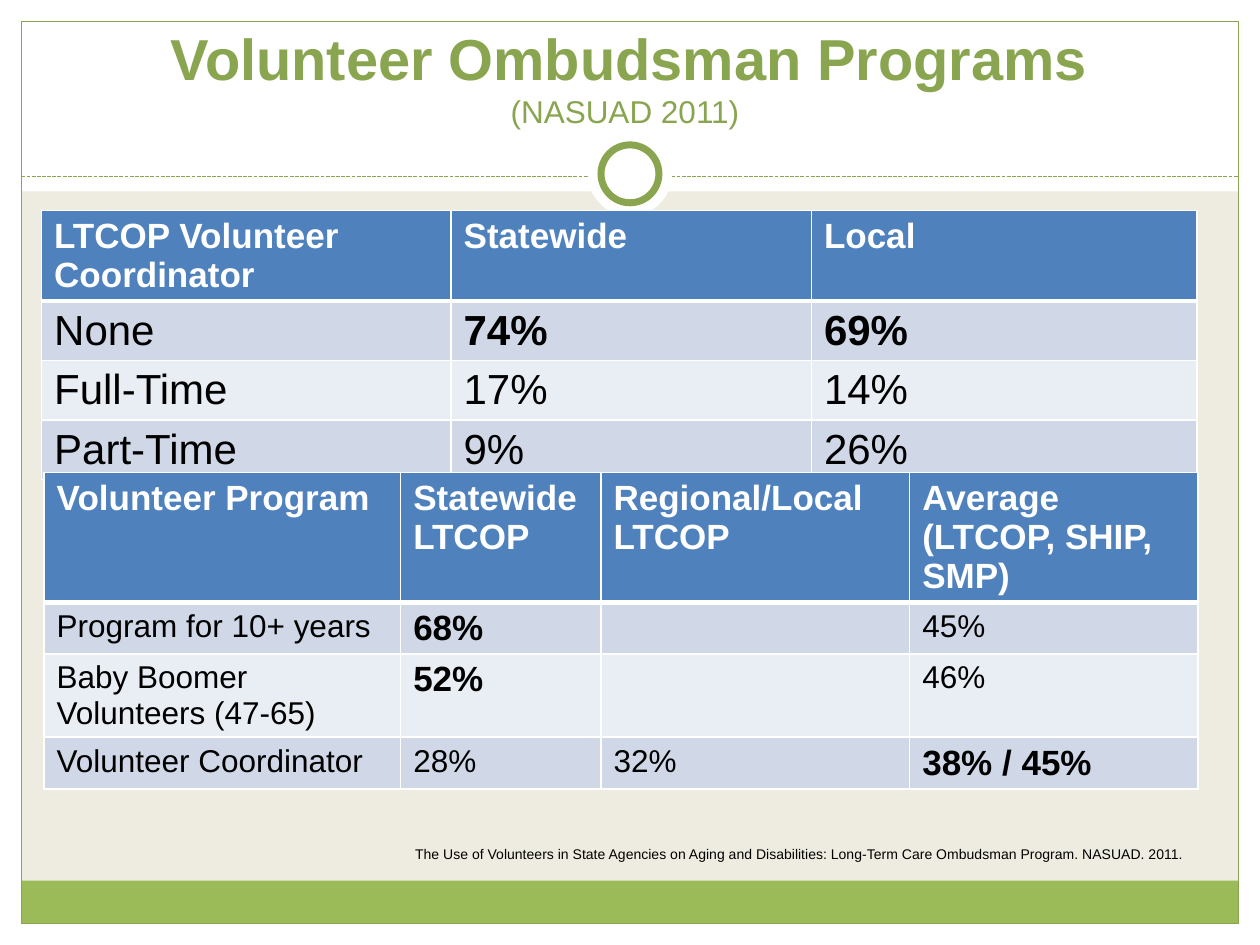
from lxml.etree import SubElement
from pptx import Presentation
from pptx.dml.color import RGBColor
from pptx.enum.dml import MSO_LINE
from pptx.enum.shapes import MSO_CONNECTOR, MSO_SHAPE
from pptx.enum.text import MSO_ANCHOR, MSO_AUTO_SIZE, PP_ALIGN
from pptx.oxml.ns import qn
from pptx.util import Inches, Pt

WIDTH, HEIGHT = 10, 7.5
MARGIN = 0.17
FONT = "Arial"
WHITE = RGBColor(0xFF, 0xFF, 0xFF)
BLACK = RGBColor(0, 0, 0)
BEIGE = RGBColor(0xEE, 0xEC, 0xE1)
GREEN = RGBColor(0x9B, 0xBB, 0x59)
DARK_GREEN = RGBColor(0x89, 0xA5, 0x4F)
BLUE = RGBColor(0x4F, 0x81, 0xBD)
BANDS = (RGBColor(0xD0, 0xD8, 0xE8), RGBColor(0xE9, 0xED, 0xF4))

COORDINATORS = [
    ["LTCOP Volunteer Coordinator", "Statewide", "Local"],
    ["None", "74%", "69%"],
    ["Full-Time", "17%", "14%"],
    ["Part-Time", "9%", "26%"],
]
PROGRAMS = [
    ["Volunteer Program", "Statewide LTCOP", "Regional/Local LTCOP",
     "Average\n(LTCOP, SHIP, SMP)"],
    ["Program for 10+ years", "68%", "", "45%"],
    ["Baby Boomer Volunteers (47-65)", "52%", "", "46%"],
    ["Volunteer Coordinator", "28%", "32%", "38% / 45%"],
]
HIGHLIGHTS = {"74%", "69%", "68%", "52%", "38% / 45%"}


def style_font(font, size, color, bold=False):
    font.name, font.size, font.bold = FONT, Pt(size), bold
    font.color.rgb = color


def add_shape(s, kind, x, y, w, h, fill=None, line_width=None):
    sp = s.shapes.add_shape(kind, Inches(x), Inches(y), Inches(w), Inches(h))
    sp.shadow.inherit = False
    if fill is None:
        sp.fill.background()
    else:
        sp.fill.solid()
        sp.fill.fore_color.rgb = fill
    if line_width is None:
        sp.line.fill.background()
    else:
        sp.line.color.rgb = DARK_GREEN
        sp.line.width = Pt(line_width)


def add_divider(s, y):
    line = s.shapes.add_connector(MSO_CONNECTOR.STRAIGHT, Inches(MARGIN), Inches(y),
                                  Inches(WIDTH - MARGIN), Inches(y))
    line.line.color.rgb = DARK_GREEN
    line.line.width = Pt(0.75)
    line.line.dash_style = MSO_LINE.SQUARE_DOT
    SubElement(line._element.spPr, qn("a:effectLst"))


def add_circle(s, center_y, size, line_width=None):
    add_shape(s, MSO_SHAPE.OVAL, (WIDTH - size) / 2, center_y - size / 2, size, size,
              WHITE, line_width)


def add_frame(s):
    """Draw the white margins, the green footer band and the ringed divider."""
    inner = WIDTH - 2 * MARGIN
    for x, y, w, h in ((0, HEIGHT - MARGIN, WIDTH, MARGIN),
                       (0, 0, WIDTH, 1.52),
                       (0, 0, MARGIN, HEIGHT),
                       (WIDTH - MARGIN, 0, MARGIN, HEIGHT)):
        add_shape(s, MSO_SHAPE.RECTANGLE, x, y, w, h, WHITE)
    add_shape(s, MSO_SHAPE.RECTANGLE, MARGIN, 6.99, inner, 0.34, GREEN)
    add_shape(s, MSO_SHAPE.RECTANGLE, MARGIN, MARGIN, inner, HEIGHT - 2 * MARGIN,
              line_width=0.75)
    add_divider(s, 1.4)
    add_circle(s, 1.38, 0.67)
    add_circle(s, 1.38, 0.46, 4)


def fill_title(s, heading, source):
    title = s.shapes.title
    title.left, title.top = Inches(0.33), Inches(0.25)
    title.width, title.height = Inches(9.33), Inches(0.83)
    tf = title.text_frame
    tf.auto_size = MSO_AUTO_SIZE.NONE
    tf.vertical_anchor = MSO_ANCHOR.BOTTOM
    p = tf.paragraphs[0]
    p.alignment = PP_ALIGN.CENTER
    r = p.add_run()
    r.text = heading
    style_font(r.font, 33, DARK_GREEN, True)
    p.add_line_break()
    r = p.add_run()
    r.text = source
    style_font(r.font, 18, DARK_GREEN)


def set_borders(cell, top, bottom):
    tc_pr = cell._tc.get_or_add_tcPr()
    for side, width in (("L", 1), ("R", 1), ("T", top), ("B", bottom)):
        ln = SubElement(tc_pr, qn(f"a:ln{side}"), w=str(Pt(width)))
        SubElement(SubElement(ln, qn("a:solidFill")), qn("a:srgbClr"), val=str(WHITE))


def add_banded_table(s, x, y, widths, rows, body_size, highlight_size):
    row_height = 0.41
    table = s.shapes.add_table(len(rows), len(widths), Inches(x), Inches(y),
                               Inches(sum(widths)), Inches(row_height * len(rows))).table
    for column, width in zip(table.columns, widths):
        column.width = Inches(width)
    for i, row in enumerate(rows):
        for j, text in enumerate(row):
            cell = table.cell(i, j)
            header, bold = i == 0, i == 0 or text in HIGHLIGHTS
            set_borders(cell, 3 if i == 1 else 1, 3 if header else 1)
            cell.fill.solid()
            cell.fill.fore_color.rgb = BLUE if header else BANDS[(i - 1) % 2]
            cell.text = text
            size = 20 if header else highlight_size if bold else body_size
            for p in cell.text_frame.paragraphs:
                style_font(p.font, size, WHITE if header else BLACK, bold)


def add_citation(s, text):
    tf = s.shapes.add_textbox(Inches(0.43), Inches(6.66), Inches(9.13),
                              Inches(0.24)).text_frame
    tf.word_wrap = True
    tf.margin_right = Inches(0.16)
    p = tf.paragraphs[0]
    p.text = text
    p.alignment = PP_ALIGN.RIGHT
    style_font(p.font, 8, BLACK)


def main():
    prs = Presentation()
    prs.slide_width, prs.slide_height = Inches(WIDTH), Inches(HEIGHT)
    s = prs.slides.add_slide(prs.slide_layouts[5])
    s.background.fill.solid()
    s.background.fill.fore_color.rgb = BEIGE
    add_frame(s)
    # Bring the title in front of the white header band
    s.shapes._spTree.append(s.shapes.title._element)
    fill_title(s, "Volunteer Ombudsman Programs", "(NASUAD 2011) ")
    add_banded_table(s, 0.33, 1.67, (3.25, 2.86, 3.06), COORDINATORS, 24, 24)
    add_banded_table(s, 0.35, 3.75, (2.83, 1.59, 2.45, 2.29), PROGRAMS, 18, 20)
    add_citation(s, "The Use of Volunteers in State Agencies on Aging and Disabilities: "
                    "Long-Term Care Ombudsman Program. NASUAD. 2011.")
    prs.save("out.pptx")


if __name__ == "__main__":
    main()
